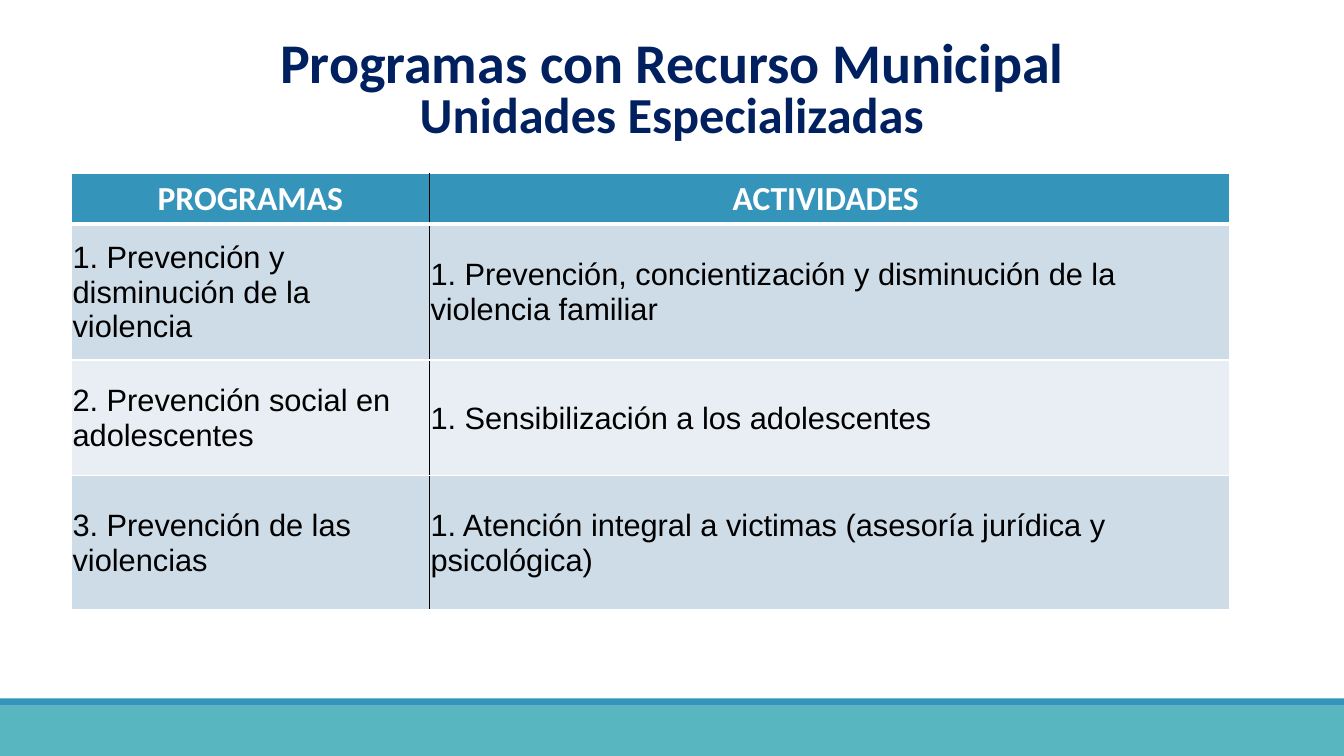
from lxml import etree
from pptx import Presentation
from pptx import util as u
from pptx.dml.color import RGBColor
from pptx.enum import shapes, text
from pptx.oxml.ns import qn

WHITE = RGBColor(0xFF, 0xFF, 0xFF)
BLACK = RGBColor(0x00, 0x00, 0x00)
NAVY = RGBColor(0x00, 0x20, 0x60)
BLUE = RGBColor(0x34, 0x94, 0xBA)
TEAL = RGBColor(0x58, 0xB6, 0xC0)
BAND_DARK = RGBColor(0xCE, 0xDC, 0xE7)
BAND_LIGHT = RGBColor(0xE8, 0xEE, 0xF3)

SLIDE_WIDTH = u.Cm(33.87)


def write(paragraph, content, color, **font_format):
    run = paragraph.add_run()
    run.text = content
    run.font.color.rgb = color
    for name, value in font_format.items():
        setattr(run.font, name, value)


def add_border(cell, position, side, color, points):
    line = etree.Element(qn(f"a:ln{side}"), w=str(u.Pt(points)))
    fill = etree.SubElement(line, qn("a:solidFill"))
    etree.SubElement(fill, qn("a:srgbClr"), val=str(color))
    cell._tc.get_or_add_tcPr().insert(position, line)


presentation = Presentation()
presentation.slide_width = SLIDE_WIDTH
presentation.slide_height = u.Cm(19.05)
slide = presentation.slides.add_slide(presentation.slide_layouts[6])

for top, height, color in ((17.78, 1.27, TEAL), (17.6, 0.18, BLUE)):
    footer_band = slide.shapes.add_shape(
        shapes.MSO_SHAPE.RECTANGLE, 0, u.Cm(top), SLIDE_WIDTH, u.Cm(height))
    footer_band.shadow.inherit = False
    footer_band.fill.solid()
    footer_band.fill.fore_color.rgb = color
    footer_band.line.fill.background()

title = slide.shapes.add_textbox(0, u.Cm(1.02), SLIDE_WIDTH, u.Cm(2.82))
title.text_frame.word_wrap = True
title_lines = (("Programas con Recurso Municipal", 40), ("Unidades Especializadas", 36))
for index, (content, size) in enumerate(title_lines):
    paragraph = title.text_frame.add_paragraph() if index else title.text_frame.paragraphs[0]
    paragraph.alignment = text.PP_ALIGN.CENTER
    paragraph.line_spacing = u.Pt(35)
    write(paragraph, content, NAVY, name="Calibri", size=u.Pt(size), bold=True)

programs = (
    ("PROGRAMAS", "ACTIVIDADES "),
    ("1. Prevención y disminución de la violencia",
     "1. Prevención, concientización y disminución de la violencia familiar"),
    ("2. Prevención social en adolescentes",
     "1. Sensibilización a los adolescentes"),
    ("3. Prevención de las violencias",
     "1. Atención integral a victimas (asesoría jurídica y psicológica)"),
)
column_widths = (9.02, 20.17)
row_heights = (1.25, 3.43, 2.92, 3.38)
header_font = {"name": "Calibri", "size": u.Pt(24), "bold": True}
body_font = {"name": "Arial", "size": u.Pt(22), "bold": False}
body_margins = {"margin_left": u.Cm(0.03), "margin_right": u.Cm(0.03),
                "margin_top": u.Cm(0.03), "margin_bottom": 0}

table = slide.shapes.add_table(
    len(programs), len(column_widths), u.Cm(1.8), u.Cm(4.37),
    u.Cm(sum(column_widths)), u.Cm(sum(row_heights))).table
for column, width in zip(table.columns, column_widths):
    column.width = u.Cm(width)
for row, height in zip(table.rows, row_heights):
    row.height = u.Cm(height)

for row_index, row_texts in enumerate(programs):
    is_header = row_index == 0
    band = BAND_DARK if row_index % 2 else BAND_LIGHT
    for column_index, content in enumerate(row_texts):
        cell = table.cell(row_index, column_index)
        cell.vertical_anchor = text.MSO_ANCHOR.MIDDLE
        cell.fill.solid()
        cell.fill.fore_color.rgb = BLUE if is_header else band
        paragraph = cell.text_frame.paragraphs[0]
        paragraph.alignment = text.PP_ALIGN.CENTER if is_header else text.PP_ALIGN.LEFT
        write(paragraph, content, WHITE if is_header else BLACK,
              **(header_font if is_header else body_font))
        if not is_header:
            for name, value in body_margins.items():
                setattr(cell, name, value)
        borders = (
            ("L", BLACK if column_index == 1 else WHITE, 1),
            ("R", BLACK if column_index == 0 else WHITE, 1),
            ("T", WHITE, 3 if row_index == 1 else 1),
            ("B", WHITE, 3 if is_header else 1),
        )
        for position, border in enumerate(borders):
            add_border(cell, position, *border)

presentation.save("out.pptx")
